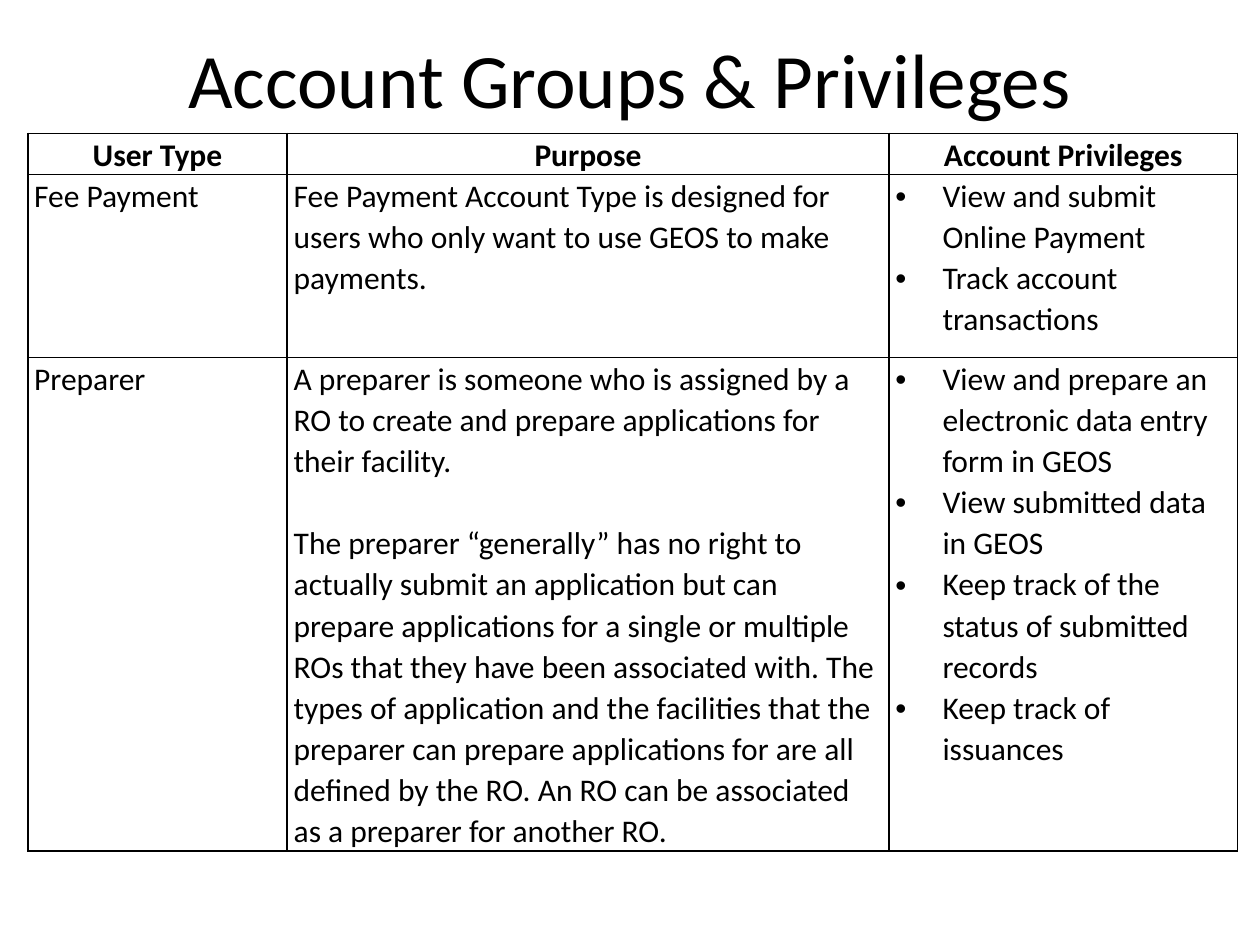
from lxml.etree import SubElement
from pptx import Presentation
from pptx.dml.color import RGBColor
from pptx.enum.text import MSO_ANCHOR, PP_ALIGN
from pptx.oxml.ns import qn
from pptx.util import Cm, Pt

BLACK = RGBColor(0, 0, 0)
WHITE = RGBColor(255, 255, 255)
FONT = "Calibri"

TITLE = "Account Groups & Privileges"
HEADINGS = ["User Type", "Purpose", "Account Privileges"]
USER_TYPES = [
    (
        ["Fee Payment"],
        ["Fee Payment Account Type is designed for users who only want to use GEOS "
         "to make payments."],
        ["View and submit Online Payment", "Track account transactions"],
    ),
    (
        ["Preparer"],
        ["A preparer is someone who is assigned by a RO to create and prepare "
         "applications for their facility.",
         "The preparer “generally” has no right to actually submit an application but "
         "can prepare applications for a single or multiple ROs that they have been "
         "associated with. The types of application and the facilities that the "
         "preparer can prepare applications for are all defined by the RO. An RO can "
         "be associated as a preparer for another RO."],
        ["View and prepare an electronic data entry form in GEOS",
         "View submitted data in GEOS",
         "Keep track of the status of submitted records",
         "Keep track of issuances"],
    ),
]
COLUMN_WIDTHS = [Cm(5.23), Cm(12.13), Cm(7.03)]
ROW_HEIGHTS = [Cm(0.83), Cm(3.69), Cm(9.87)]
PRIVILEGES_COLUMN = 2
BULLET_INDENT = Cm(0.95)
PARAGRAPH_GAP = Pt(23.5)


def style_font(font, size, bold=False):
    font.name = FONT
    font.size = Pt(size)
    font.bold = bold
    font.color.rgb = BLACK


def add_bullet(paragraph):
    properties = paragraph._p.get_or_add_pPr()
    properties.set("marL", str(BULLET_INDENT))
    properties.set("indent", str(-BULLET_INDENT))
    SubElement(properties, qn("a:buFont"), typeface="Arial")
    SubElement(properties, qn("a:buChar"), char="•")


def add_borders(cell):
    properties = cell._tc.get_or_add_tcPr()
    for side in ("a:lnL", "a:lnR", "a:lnT", "a:lnB"):
        border = SubElement(properties, qn(side), w=str(Pt(1)))
        fill = SubElement(border, qn("a:solidFill"))
        SubElement(fill, qn("a:srgbClr"), val=str(BLACK))


def fill_cell(cell, entries, heading, bulleted):
    add_borders(cell)
    cell.fill.solid()
    cell.fill.fore_color.rgb = WHITE
    cell.margin_left = cell.margin_right = Cm(0.13)
    cell.margin_top = cell.margin_bottom = 0
    cell.text_frame.text = "\n".join(entries)
    for index, paragraph in enumerate(cell.text_frame.paragraphs):
        if bulleted:
            add_bullet(paragraph)
        elif index:
            paragraph.space_before = PARAGRAPH_GAP
        paragraph.alignment = PP_ALIGN.CENTER if heading else PP_ALIGN.LEFT
        paragraph.line_spacing = 1.07
        for run in paragraph.runs:
            style_font(run.font, 18, heading)


def main():
    presentation = Presentation()
    presentation.slide_width, presentation.slide_height = Cm(25.4), Cm(19.05)
    slide = presentation.slides.add_slide(presentation.slide_layouts[5])

    title = slide.shapes.title
    title.left, title.top, title.width, title.height = Cm(1.27), Cm(-0.03), Cm(22.86), Cm(3.18)
    title.text_frame.text = TITLE
    title.text_frame.vertical_anchor = MSO_ANCHOR.MIDDLE
    title.text_frame.paragraphs[0].alignment = PP_ALIGN.CENTER
    style_font(title.text_frame.paragraphs[0].runs[0].font, 44)

    rows = [[[heading] for heading in HEADINGS], *USER_TYPES]
    privileges = slide.shapes.add_table(
        len(rows), len(HEADINGS), Cm(0.56), Cm(2.69), sum(COLUMN_WIDTHS), sum(ROW_HEIGHTS)
    ).table
    privileges.horz_banding = False
    for column, width in zip(privileges.columns, COLUMN_WIDTHS):
        column.width = width
    for row, height in zip(privileges.rows, ROW_HEIGHTS):
        row.height = height
    for r, row in enumerate(rows):
        for c, entries in enumerate(row):
            fill_cell(privileges.cell(r, c), entries, r == 0, r > 0 and c == PRIVILEGES_COLUMN)

    presentation.save("out.pptx")


if __name__ == "__main__":
    main()
